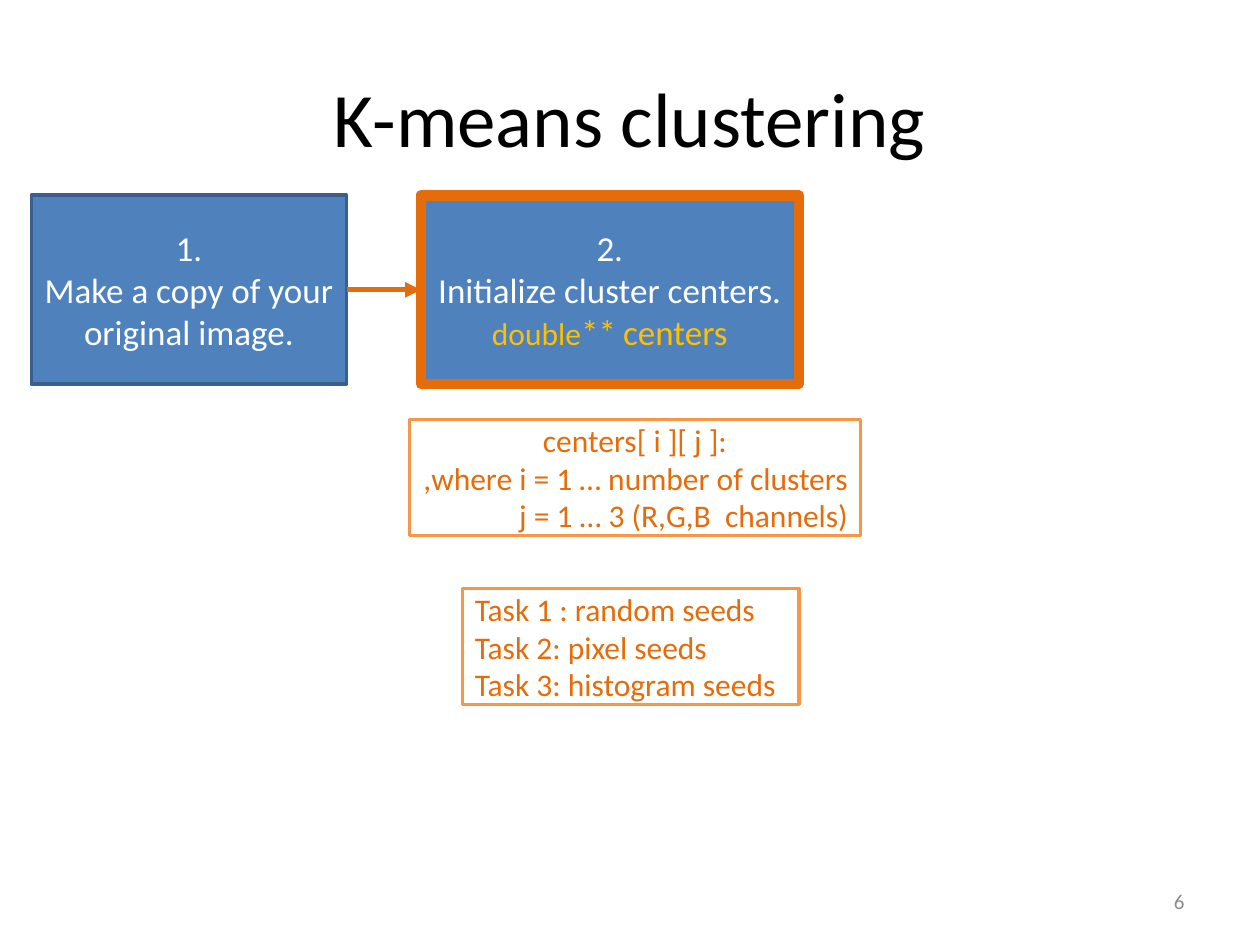
"""Build the K-means clustering slide with its steps and seed tasks."""
import dataclasses
import typing

import pptx
import pptx.dml.color
import pptx.enum.shapes
import pptx.enum.text
import pptx.oxml
import pptx.oxml.ns
import pptx.util

Inches = pptx.util.Inches
Pt = pptx.util.Pt
Align = pptx.enum.text.PP_ALIGN
LEFT, MID, RIGHT = Align.LEFT, Align.CENTER, Align.RIGHT

HUES = {
    "black": "000000",
    "white": "FFFFFF",
    "gray": "8C8C8C",
    "blue": "4F81BD",
    "navy": "3A5F8C",
    "rust": "E46C0A",
    "orange": "F79646",
    "gold": "FFC000",
}


class Bit(typing.NamedTuple):
    """A run with its own size and hue."""
    text: str
    size: int
    hue: str


class Line(typing.NamedTuple):
    """A paragraph of plain text, or of bits."""
    text: str
    align: Align = MID
    bits: tuple[Bit, ...] = ()


@dataclasses.dataclass
class Box:
    """A framed box of text."""
    left: float
    top: float
    width: float
    height: float
    fill: str
    edge: str
    weight: float
    size: int
    ink: str
    lines: list[Line]


STEP_TOP, STEP_HIGH, NOTE_HIGH = 1.55, 1.5, 0.92
CODE = (Bit("double", 18, "gold"), Bit("**", 20, "gold"),
        Bit(" ", 18, "gold"), Bit("centers", 20, "gold"))

FIRST = Box(0.25, STEP_TOP, 2.5, STEP_HIGH, "blue", "navy", 2, 20, "white", [
    Line("1."), Line("Make a copy of your original image.")])
NEXT = Box(3.34, STEP_TOP, 3, STEP_HIGH, "blue", "rust", 6, 20, "white", [
    Line("2."), Line("Initialize cluster centers."), Line("", MID, CODE)])
INDEX = Box(3.25, 3.33, 3.58, NOTE_HIGH, "white", "orange", 2, 18, "rust", [
    Line("centers[ i ][ j ]:"),
    Line(",where i = 1 … number of clusters", RIGHT),
    Line(" j = 1 … 3 (R,G,B  channels)", RIGHT)])
TASKS = Box(3.67, 4.67, 2.67, NOTE_HIGH, "white", "orange", 2, 18, "rust", [
    Line("Task 1 : random seeds", LEFT),
    Line("Task 2: pixel seeds", LEFT),
    Line("Task 3: histogram seeds", LEFT)])


def color(hue: str) -> pptx.dml.color.RGBColor:
    """Look up a hue."""
    return pptx.dml.color.RGBColor.from_string(HUES[hue])


def style(font, size: int, hue: str) -> None:
    """Set the face, size and hue of a font."""
    font.name = "Calibri"
    font.size = Pt(size)
    font.color.rgb = color(hue)


def write(frame, lines: list[Line], size: int, ink: str) -> None:
    """Fill a text frame with lines, centred by height."""
    frame.word_wrap = True
    frame.vertical_anchor = pptx.enum.text.MSO_ANCHOR.MIDDLE
    for count, line in enumerate(lines):
        para = frame.add_paragraph() if count else frame.paragraphs[0]
        para.alignment = line.align
        if line.bits:
            for bit in line.bits:
                run = para.add_run()
                run.text = bit.text
                style(run.font, bit.size, bit.hue)
        else:
            para.text = line.text
            style(para.font, size, ink)


def place(shape, left: float, top: float, width: float, height: float) -> None:
    """Move and size a shape."""
    shape.left, shape.top = Inches(left), Inches(top)
    shape.width, shape.height = Inches(width), Inches(height)


def draw(slide, box: Box) -> None:
    """Draw a framed box."""
    shape = slide.shapes.add_shape(
        pptx.enum.shapes.MSO_SHAPE.RECTANGLE, Inches(box.left), Inches(box.top),
        Inches(box.width), Inches(box.height))
    shape.shadow.inherit = False
    shape.fill.solid()
    shape.fill.fore_color.rgb = color(box.fill)
    shape.line.color.rgb = color(box.edge)
    shape.line.width = Pt(box.weight)
    write(shape.text_frame, box.lines, box.size, box.ink)


def link(slide, start: Box, end: Box) -> None:
    """Draw an arrow from one box to the box on its right."""
    level = Inches(start.top + start.height / 2)
    arrow = slide.shapes.add_connector(
        pptx.enum.shapes.MSO_CONNECTOR.STRAIGHT,
        Inches(start.left + start.width), level, Inches(end.left), level)
    arrow.line.color.rgb = color("rust")
    arrow.line.width = Pt(3)
    space = pptx.oxml.ns.nsdecls("a")
    props = arrow.element.spPr
    head = pptx.oxml.parse_xml(f'<a:tailEnd {space} type="triangle"/>')
    props.find(pptx.oxml.ns.qn("a:ln")).append(head)
    props.append(pptx.oxml.parse_xml(f"<a:effectLst {space}/>"))


def main() -> None:
    """Build and save the slide."""
    deck = pptx.Presentation()
    deck.slide_width, deck.slide_height = Inches(10), Inches(7.5)
    slide = deck.slides.add_slide(deck.slide_layouts[5])
    title = slide.shapes.title
    place(title, 0.5, 0.3, 9, 1.25)
    write(title.text_frame, [Line("K-means clustering")], 44, "black")
    page = slide.shapes.add_textbox(
        Inches(7.17), Inches(6.95), Inches(2.33), Inches(0.4))
    write(page.text_frame, [Line("6", RIGHT)], 12, "gray")
    for box in (FIRST, NEXT):
        draw(slide, box)
    link(slide, FIRST, NEXT)
    for box in (INDEX, TASKS):
        draw(slide, box)
    deck.save("out.pptx")


if __name__ == "__main__":
    main()
